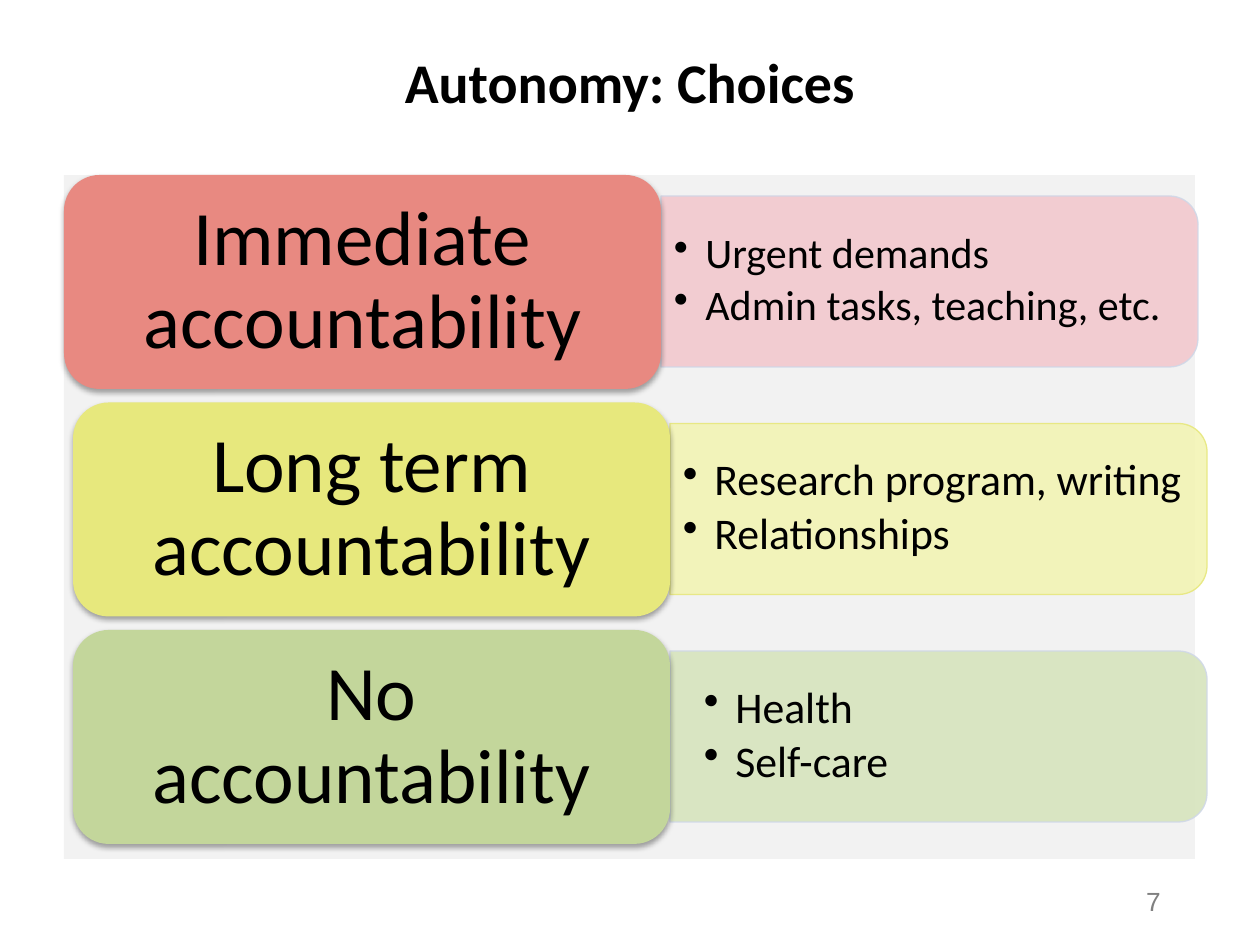
from lxml import etree
from pptx import Presentation
from pptx.dml.color import RGBColor
from pptx.enum.shapes import MSO_SHAPE
from pptx.enum.text import MSO_ANCHOR, MSO_AUTO_SIZE, PP_ALIGN
from pptx.oxml.ns import qn
from pptx.util import Emu, Pt

RECT = MSO_SHAPE.RECTANGLE
ROUND = MSO_SHAPE.ROUNDED_RECTANGLE
TAB = MSO_SHAPE.ROUND_2_SAME_RECTANGLE
MIDDLE = MSO_ANCHOR.MIDDLE
GROW = MSO_AUTO_SIZE.SHAPE_TO_FIT_TEXT
LEFT, CENTER = PP_ALIGN.LEFT, PP_ALIGN.CENTER
SCALE = 914400 / 126


def px(num):
    return Emu(round(num * SCALE))


def rgb(code):
    return RGBColor.from_string(code)


def put(item, vals):
    for key, val in vals.items():
        setattr(item, key, val)


def node(owner, tag, **attrs):
    return etree.SubElement(owner, qn(tag), {k: str(v) for k, v in attrs.items()})


class Deck:
    font = "Calibri"
    ink = "000000"

    def __init__(self, wide, high):
        self.prs = Presentation()
        put(self.prs, {"slide_width": px(wide), "slide_height": px(high)})
        self.slide = self.prs.slides.add_slide(self.prs.slide_layouts[6])

    def shape(self, kind, box, fill, edge=None):
        item = self.slide.shapes.add_shape(kind, *map(px, box))
        item.shadow.inherit = False
        item.fill.solid()
        item.fill.fore_color.rgb = rgb(fill)
        if edge:
            item.line.color.rgb = rgb(edge)
            item.line.width = Pt(0.75)
        else:
            item.line.fill.background()
        return item

    def fill_text(self, item, lines, size, align=LEFT, pad=(13, 6), para=None,
                  bullet=False, font=None, color=None, bold=False):
        frame = item.text_frame
        side, edge = map(px, pad)
        put(frame, {"word_wrap": True, "vertical_anchor": MIDDLE,
                    "margin_left": side, "margin_right": side,
                    "margin_top": edge, "margin_bottom": edge})
        for num, line in enumerate(lines):
            par = frame.add_paragraph() if num else frame.paragraphs[0]
            put(par, {"text": line, "alignment": align, **(para or {})})
            if bullet:
                props = par._p.get_or_add_pPr()
                props.set("marL", "228600")
                props.set("indent", "-228600")
                node(props, "a:buChar", char="•")
            put(par.font, {"name": font or self.font, "size": Pt(size), "bold": bold})
            par.font.color.rgb = rgb(color or self.ink)
        return frame

    def text(self, box, lines, size, **style):
        item = self.slide.shapes.add_textbox(*map(px, box))
        return self.fill_text(item, lines, size, **style)

    def detail(self, box, fill, edge):
        # Turned a quarter so that the rounded corners face right
        left, top, wide, high = box
        shift = (wide - high) / 2
        item = self.shape(TAB, (left + shift, top - shift, high, wide), fill, edge)
        item.rotation = 90
        for color in item._element.spPr.iter(qn("a:srgbClr")):
            node(color, "a:alpha", val=90000)

    def label(self, box, text, fill):
        item = self.shape(ROUND, box, fill)
        glow = node(item._element.spPr.find(qn("a:effectLst")), "a:outerShdw",
                    blurRad=Pt(3.1), dist=Pt(1.8), dir=5400000, rotWithShape=0)
        node(node(glow, "a:srgbClr", val="000000"), "a:alpha", val=35000)
        self.fill_text(item, [text], 44, align=CENTER, pad=(23, 11),
                       para={"line_spacing": 0.9})


# Label, points, left, label fill, detail fill, detail edge, point size, padding
ROWS = [
    ("Immediate accountability", ["Urgent demands", "Admin tasks, teaching, etc."],
     64, "E88981", "F2C8CE", "D0D8E8", 24, (13, 6)),
    ("Long term accountability", ["Research program, writing", "Relationships"],
     73, "E7E87D", "F3F4B5", "E7E87D", 25, (13, 6)),
    ("No accountability", ["Health", "Self-care"],
     73, "C3D69B", "D7E4BD", "D0D8E8", 25, (34, 18)),
]
TOP, STEP = 175, 227.5
WIDE, HIGH = 597, 214


def main():
    deck = Deck(1260, 945)

    # Backdrop, page number and title
    deck.shape(RECT, (64, TOP, 1131, 684), "F2F2F2")
    page = deck.text((1133, 879, 58, 44), ["7"], 15, font="Arial", color="808080")
    put(page, {"word_wrap": False, "auto_size": GROW})
    deck.text((63, 38, 1134, 87), ["Autonomy: Choices"], 32, align=CENTER, bold=True)

    # Rows of choices
    for num, (name, points, left, fill, pale, edge, size, pad) in enumerate(ROWS):
        top = TOP + num * STEP
        start = left + WIDE
        deck.detail((start, top + 21, 537, 171), pale, edge)
        deck.text((start, top + 29, 528, 154), points, size, pad=pad, bullet=True,
                  para={"line_spacing": 0.9, "space_after": Pt(3.7)})
        deck.label((left, top, WIDE, HIGH), name, fill)

    deck.prs.save("out.pptx")


if __name__ == "__main__":
    main()
